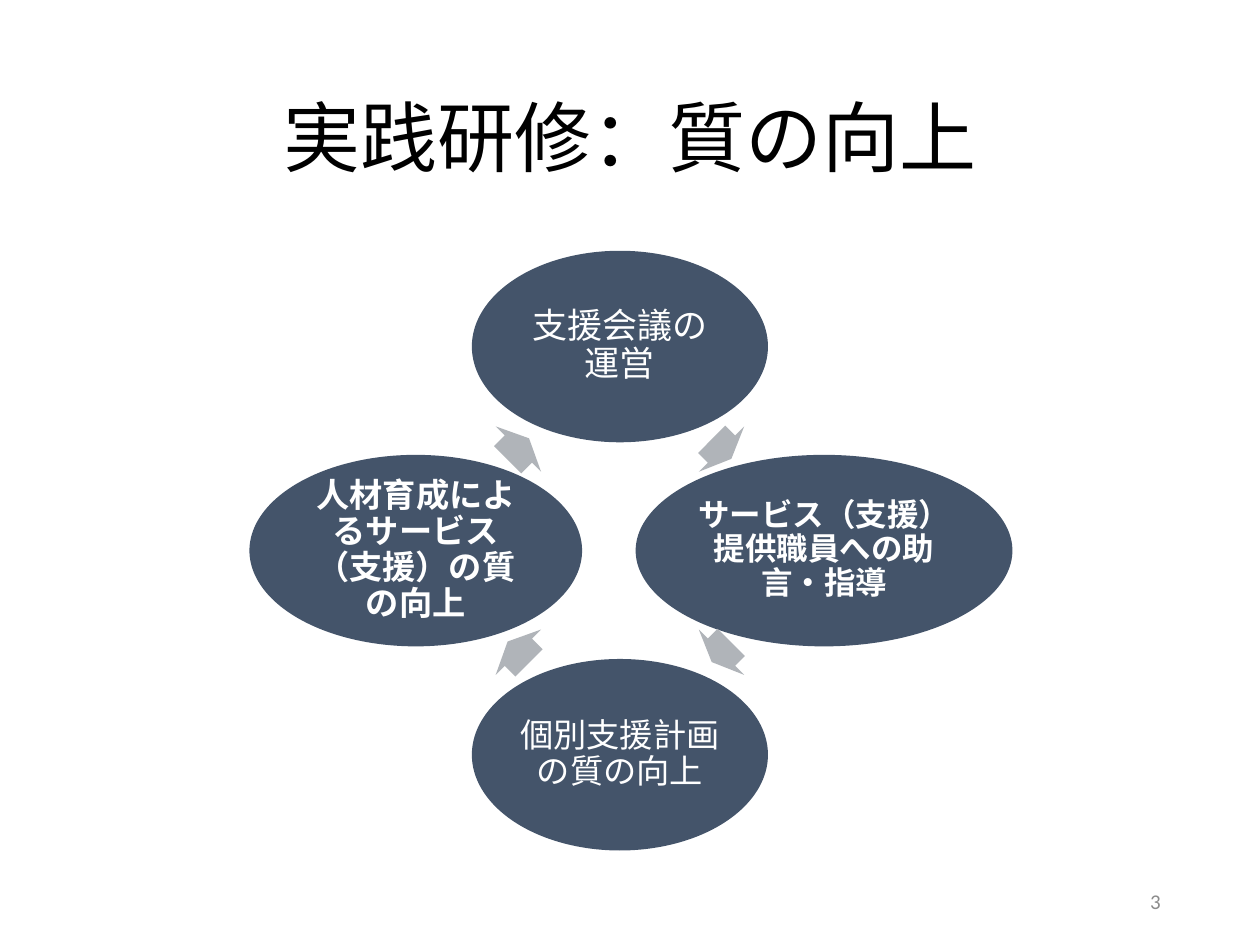
from dataclasses import dataclass
from math import cos, radians, sin

from pptx import Presentation, util as u
from pptx.dml.color import RGBColor
from pptx.enum import shapes, text


@dataclass(frozen=True)
class Theme:
    font: str = "Calibri"
    ink: str = "000000"
    node: str = "44546A"
    arrow: str = "B0B4B9"
    light: str = "FFFFFF"
    muted: str = "8C8C8C"
    title_size: int = 44
    number_size: int = 12


class CyclePage:
    """Draws the title, cycle and page number in one theme."""

    def __init__(self, deck, theme):
        self.theme = theme
        self.page = deck.slides.add_slide(deck.slide_layouts[5])

    def label(self, box, wording, size, color, align, bold=False):
        frame = box.text_frame
        frame.text = wording
        frame.word_wrap = True
        frame.vertical_anchor = text.MSO_ANCHOR.MIDDLE
        para = frame.paragraphs[0]
        para.alignment = align
        span = para.runs[0]
        span.font.name = self.theme.font
        span.font.size = u.Pt(size)
        span.font.bold = bold
        span.font.color.rgb = RGBColor.from_string(color)
        return para

    def title(self, wording, left, top, width, height):
        box = self.page.shapes.title
        box.left, box.top = u.Inches(left), u.Inches(top)
        box.width, box.height = u.Inches(width), u.Inches(height)
        para = self.label(box, wording, self.theme.title_size, self.theme.ink,
                          text.PP_ALIGN.CENTER)
        para.line_spacing = 0.9

    def centred_shape(self, kind, x, y, width, height, color):
        box = self.page.shapes.add_shape(
            kind, u.Inches(x - width / 2), u.Inches(y - height / 2),
            u.Inches(width), u.Inches(height))
        box.shadow.inherit = False
        box.fill.solid()
        box.fill.fore_color.rgb = RGBColor.from_string(color)
        box.line.fill.background()
        return box

    def node(self, wording, x, y, width, height, size, bold):
        box = self.centred_shape(shapes.MSO_SHAPE.OVAL, x, y, width, height,
                                 self.theme.node)
        frame = box.text_frame
        frame.margin_left = frame.margin_right = u.Inches(0.03)
        frame.margin_top = frame.margin_bottom = u.Inches(0.03)
        para = self.label(box, wording, size, self.theme.light,
                          text.PP_ALIGN.CENTER, bold)
        para.line_spacing = 0.9
        para.space_after = u.Pt(0.35 * size)

    def arrow(self, x, y, width, height, rotation):
        box = self.centred_shape(shapes.MSO_SHAPE.RIGHT_ARROW, x, y, width,
                                 height, self.theme.arrow)
        box.adjustments[0], box.adjustments[1] = 0.6, 0.5
        box.rotation = rotation

    def number(self, wording, left, top, width, height):
        box = self.page.shapes.add_textbox(
            u.Inches(left), u.Inches(top), u.Inches(width), u.Inches(height))
        self.label(box, wording, self.theme.number_size, self.theme.muted,
                   text.PP_ALIGN.RIGHT)


def main():
    deck = Presentation()
    deck.slide_width, deck.slide_height = u.Inches(10), u.Inches(7.5)
    page = CyclePage(deck, Theme())
    page.title("実践研修：質の向上", 0.69, 0.4, 8.62, 1.45)

    center_x, center_y, radius, arrow_radius = 4.92, 4.37, 1.62, 1.14
    steps = [
        ("支援会議の運営", 2.35, 20, False, 0.22),
        ("サービス（支援）提供職員への助言・指導", 2.99, 18, True, 0.22),
        ("個別支援計画の質の向上", 2.35, 19, False, 0.24),
        ("人材育成によるサービス（支援）の質の向上", 2.64, 19, True, 0.24),
    ]
    for index, (wording, width, size, bold, arrow_width) in enumerate(steps):
        turn = radians(90 * index)
        page.node(wording, center_x + radius * sin(turn),
                  center_y - radius * cos(turn), width, 1.52, size, bold)
        heading = 90 * index + 45
        turn = radians(heading)
        page.arrow(center_x + arrow_radius * sin(turn),
                   center_y - arrow_radius * cos(turn),
                   arrow_width, 0.51, heading)

    page.number("3", 7.06, 6.95, 2.25, 0.4)
    deck.save("out.pptx")


if __name__ == "__main__":
    main()
